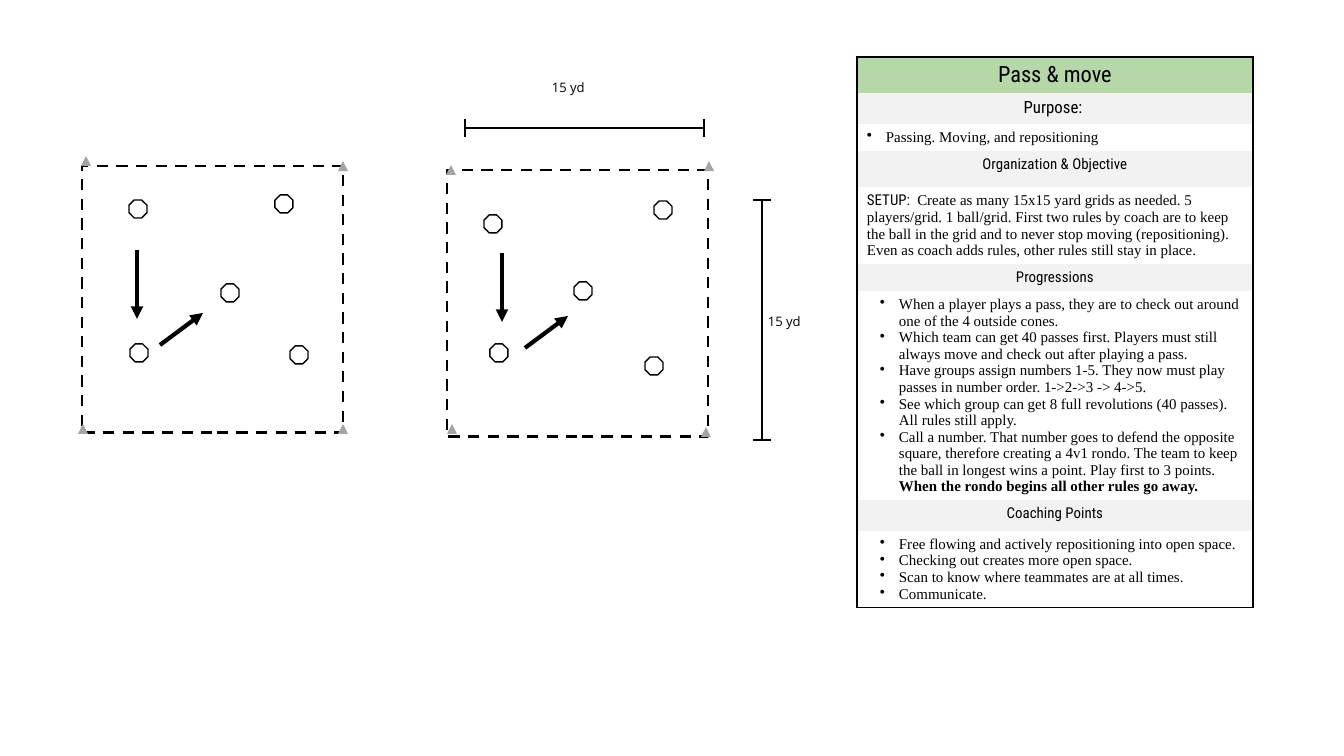
"""Build the "Pass & move" drill slide: two player grids and a session plan table."""
from dataclasses import dataclass
from typing import NamedTuple

import pptx
import pptx.dml.color
import pptx.enum.dml
import pptx.enum.shapes
import pptx.enum.text
import pptx.oxml.ns
import pptx.shapes.autoshape
import pptx.slide
import pptx.table
import pptx.text.text
import pptx.util
from lxml import etree

PX = 914400 / 134.4
BLACK = pptx.dml.color.RGBColor(0x00, 0x00, 0x00)
WHITE = pptx.dml.color.RGBColor(0xFF, 0xFF, 0xFF)
GREEN = pptx.dml.color.RGBColor(0xB6, 0xD7, 0xA8)
PALE_GRAY = pptx.dml.color.RGBColor(0xF2, 0xF2, 0xF2)
CONE_GRAY = pptx.dml.color.RGBColor(0xA5, 0xA5, 0xA5)
HEADING_FONT = "Roboto Condensed"
BODY_FONT = "Times New Roman"
LABEL_FONT = "Open Sans"
PLAYER_SIZE, CONE_SIZE, TICK = 18, 10, 9
BULLET_HANG = 19
TABLE_LEFT, TABLE_TOP, TABLE_WIDTH = 857, 57, 396
SHAPES = pptx.enum.shapes.MSO_SHAPE


class Point(NamedTuple):
    x: int
    y: int


class Box(NamedTuple):
    left: int
    top: int
    width: int
    height: int


class Piece(NamedTuple):
    text: str
    font: str = BODY_FONT
    size: int = 8
    bold: bool = False


@dataclass
class Grid:
    frame: Box
    players: list[Point]
    cones: list[Point]
    arrows: list[tuple[Point, Point]]


@dataclass
class Row:
    height: int
    paragraphs: list[list[Piece]]
    fill: pptx.dml.color.RGBColor = WHITE
    bullet_margin: int = 0
    centered: bool = False


def heading(text: str, height: int, size: int = 8, fill: pptx.dml.color.RGBColor = PALE_GRAY) -> Row:
    """Describe a centred heading row."""
    return Row(height, [[Piece(text, HEADING_FONT, size)]], fill, centered=True)


GRIDS = [
    Grid(
        Box(82, 166, 261, 267),
        [Point(139, 353), Point(138, 209), Point(230, 293), Point(284, 204), Point(299, 355)],
        [Point(86, 161), Point(343, 166), Point(343, 429), Point(83, 429)],
        [(Point(137, 250), Point(137, 319)), (Point(160, 345), Point(203, 313))],
    ),
    Grid(
        Box(447, 170, 261, 267),
        [Point(493, 224), Point(499, 353), Point(583, 291), Point(654, 366), Point(663, 210)],
        [Point(709, 166), Point(451, 170), Point(452, 429), Point(706, 432)],
        [(Point(502, 253), Point(502, 322)), (Point(525, 348), Point(568, 316))],
    ),
]
ROWS = [
    heading("Pass & move", 31, 12, GREEN),
    heading("Purpose: ", 31, 9),
    Row(15, [[Piece("Passing. Moving, and repositioning")]], bullet_margin=19),
    heading("Organization & Objective", 36),
    Row(42, [[
        Piece("SETUP:  ", HEADING_FONT),
        Piece("Create as many 15x15 yard grids as needed. 5 players/grid. 1 ball/grid. "
              "First two rules by coach are to keep the ball in the grid and to never stop moving "
              "(repositioning). Even as coach adds rules, other rules still stay in place."),
    ]]),
    heading("Progressions", 15),
    Row(31, [
        [Piece("When a player plays a pass, they are to check out around one of the 4 outside cones.")],
        [Piece("Which team can get 40 passes first. Players must still always move and check out "
               "after playing a pass.")],
        [Piece("Have groups assign numbers 1-5. They now must play passes in number order. "
               "1->2->3 -> 4->5.")],
        [Piece("See which group can get 8 full revolutions (40 passes). All rules still apply.")],
        [Piece("Call a number. That number goes to defend the opposite square, therefore creating "
               "a 4v1 rondo. The team to keep the ball in longest wins a point. "
               "Play first to 3 points. "),
         Piece("When the rondo begins all other rules go away.", bold=True)],
    ], bullet_margin=32),
    heading("Coaching Points", 31),
    Row(31, [
        [Piece("Free flowing and actively repositioning into open space.")],
        [Piece("Checking out creates more open space.")],
        [Piece("Scan to know where teammates are at all times.")],
        [Piece("Communicate.")],
    ], bullet_margin=32),
]


def px(length: int) -> pptx.util.Emu:
    """Turn pixels into EMU."""
    return pptx.util.Emu(round(length * PX))


def add_child(parent: etree._Element, tag: str, **attributes: str) -> etree._Element:
    """Append a DrawingML element."""
    return etree.SubElement(parent, pptx.oxml.ns.qn(tag), attributes)


def add_text(paragraph: pptx.text.text._Paragraph, text: str, *, font: str = BODY_FONT,
             size: int = 8, bold: bool = False) -> None:
    """Add a formatted run to a paragraph."""
    run = paragraph.add_run()
    run.text = text
    run.font.name = font
    run.font.size = pptx.util.Pt(size)
    run.font.bold = bold
    run.font.color.rgb = BLACK


def add_line(slide: pptx.slide.Slide, start: Point, end: Point, width: float = 0.75,
             arrow: bool = False) -> None:
    """Draw a straight black line, with an arrowhead if wanted."""
    line = slide.shapes.add_connector(
        pptx.enum.shapes.MSO_CONNECTOR.STRAIGHT, *map(px, start), *map(px, end))
    line.line.color.rgb = BLACK
    line.line.width = pptx.util.Pt(width)
    if arrow:
        add_child(line.line._get_or_add_ln(), "a:tailEnd", type="triangle")
    add_child(line._element.spPr, "a:effectLst")


def add_shape(slide: pptx.slide.Slide, kind: SHAPES, box: Box,
              fill: pptx.dml.color.RGBColor | None = None,
              line_width: float = 0) -> pptx.shapes.autoshape.Shape:
    """Draw a preset shape; a zero line width means no outline."""
    shape = slide.shapes.add_shape(kind, *map(px, box))
    shape.shadow.inherit = False
    if fill is None:
        shape.fill.background()
    else:
        shape.fill.solid()
        shape.fill.fore_color.rgb = fill
    if line_width:
        shape.line.color.rgb = BLACK
        shape.line.width = pptx.util.Pt(line_width)
    else:
        shape.line.fill.background()
    return shape


def around(center: Point, size: int) -> Box:
    """Give the square box around a centre."""
    return Box(center.x - size // 2, center.y - size // 2, size, size)


def add_grid(slide: pptx.slide.Slide, grid: Grid) -> None:
    """Draw a dashed grid with its players, passes and cones."""
    frame = add_shape(slide, SHAPES.RECTANGLE, grid.frame, line_width=1.5)
    frame.line.dash_style = pptx.enum.dml.MSO_LINE.DASH
    for player in grid.players:
        add_shape(slide, SHAPES.OCTAGON, around(player, PLAYER_SIZE), WHITE, 0.75)
    for start, end in grid.arrows:
        add_line(slide, start, end, 2.25, arrow=True)
    for cone in grid.cones:
        add_shape(slide, SHAPES.ISOSCELES_TRIANGLE, around(cone, CONE_SIZE), CONE_GRAY)


def add_dimension(slide: pptx.slide.Slide, start: Point, end: Point, label: Box) -> None:
    """Draw a measuring line with end ticks and a label."""
    add_line(slide, start, end)
    across = Point(0, TICK) if start.y == end.y else Point(TICK, 0)
    for x, y in (start, end):
        add_line(slide, Point(x - across.x, y - across.y), Point(x + across.x, y + across.y))
    frame = slide.shapes.add_textbox(*map(px, label)).text_frame
    frame.word_wrap = True
    frame.margin_left = frame.margin_top = frame.margin_right = frame.margin_bottom = 0
    add_text(frame.paragraphs[0], "15 yd", font=LABEL_FONT, size=7)


def set_borders(cell: pptx.table._Cell, sides: str) -> None:
    """Give the named sides (of L, R, T, B) a thin black border and clear the rest."""
    for side in "LRTB":
        border = add_child(cell._tc.get_or_add_tcPr(), f"a:ln{side}", w=str(pptx.util.Pt(0.75)))
        if side in sides:
            add_child(add_child(border, "a:solidFill"), "a:srgbClr", val=str(BLACK))
        else:
            add_child(border, "a:noFill")


def fill_cell(cell: pptx.table._Cell, row: Row) -> None:
    """Set a cell's fill, margins and paragraphs."""
    cell.fill.solid()
    cell.fill.fore_color.rgb = row.fill
    cell.margin_left = cell.margin_right = px(10)
    cell.margin_top = cell.margin_bottom = px(5)
    for index, pieces in enumerate(row.paragraphs):
        paragraph = cell.text_frame.add_paragraph() if index else cell.text_frame.paragraphs[0]
        if row.centered:
            paragraph.alignment = pptx.enum.text.PP_ALIGN.CENTER
        if row.bullet_margin:
            properties = paragraph._p.get_or_add_pPr()
            properties.set("marL", str(px(row.bullet_margin)))
            properties.set("indent", str(px(-BULLET_HANG)))
            add_child(add_child(properties, "a:buClr"), "a:srgbClr", val=str(BLACK))
            add_child(properties, "a:buChar", char="•")
        for piece in pieces:
            add_text(paragraph, piece.text, font=piece.font, size=piece.size, bold=piece.bold)


def add_plan(slide: pptx.slide.Slide, rows: list[Row]) -> None:
    """Draw the session plan table."""
    box = Box(TABLE_LEFT, TABLE_TOP, TABLE_WIDTH, sum(row.height for row in rows))
    table = slide.shapes.add_table(len(rows), 1, *map(px, box)).table
    table.first_row = table.horz_banding = False
    for index, row in enumerate(rows):
        table.rows[index].height = px(row.height)
        cell = table.cell(index, 0)
        set_borders(cell, "LR" + "T" * (index == 0) + "B" * (index == len(rows) - 1))
        fill_cell(cell, row)


def main() -> None:
    """Build and save the presentation."""
    presentation = pptx.Presentation()
    presentation.slide_width, presentation.slide_height = px(1344), px(756)
    slide = presentation.slides.add_slide(presentation.slide_layouts[6])
    add_plan(slide, ROWS)
    for grid in GRIDS:
        add_grid(slide, grid)
    add_dimension(slide, Point(465, 128), Point(704, 128), Box(552, 79, 69, 16))
    add_dimension(slide, Point(762, 200), Point(762, 440), Box(768, 314, 69, 16))
    presentation.save("out.pptx")


if __name__ == "__main__":
    main()
